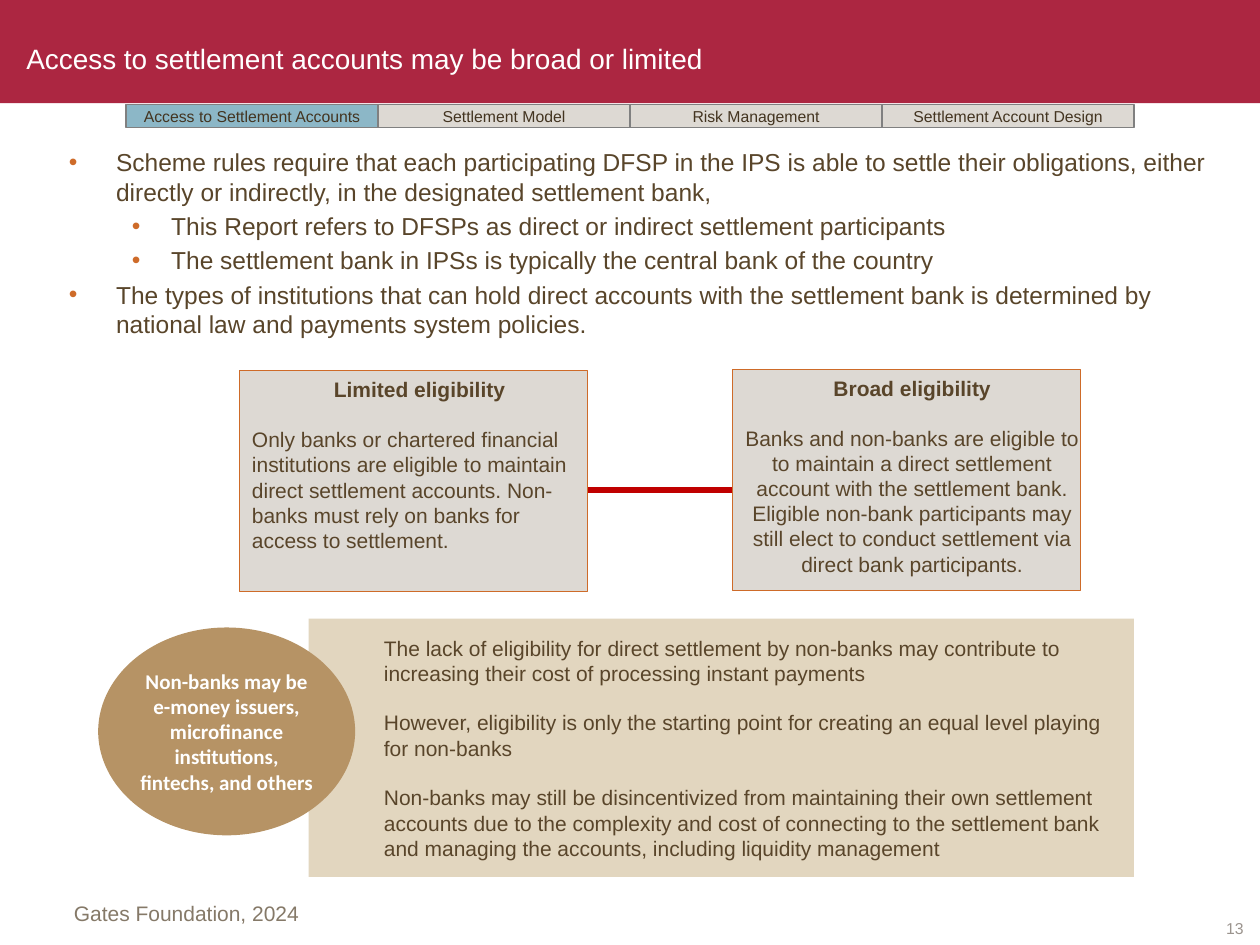
from lxml.etree import SubElement
from pptx import Presentation
from pptx.dml.color import RGBColor
from pptx.enum.shapes import MSO_CONNECTOR, MSO_SHAPE as Shape
from pptx.enum.text import MSO_ANCHOR as Anchor, MSO_AUTO_SIZE, PP_ALIGN as Align
from pptx.oxml import parse_xml
from pptx.oxml.ns import nsdecls, qn
from pptx.util import Cm, Pt

WHITE = RGBColor(0xFF, 0xFF, 0xFF)
CRIMSON = RGBColor(0xAC, 0x26, 0x41)
RED = RGBColor(0xC0, 0x00, 0x00)
ORANGE = RGBColor(0xCE, 0x6B, 0x29)
BROWN = RGBColor(0x59, 0x45, 0x2A)
DARK_BROWN = RGBColor(0x43, 0x34, 0x20)
TAUPE = RGBColor(0x85, 0x79, 0x68)
LIGHT_TAUPE = RGBColor(0x9B, 0x94, 0x8E)
STONE = RGBColor(0xDD, 0xD9, 0xD3)
SAND = RGBColor(0xE2, 0xD6, 0xBF)
TAN = RGBColor(0xB6, 0x93, 0x65)
BLUE = RGBColor(0x8C, 0xB7, 0xC7)
GREY = RGBColor(0x80, 0x80, 0x80)

BODY = [
    (0, "Scheme rules require that each participating DFSP in the IPS is able to settle "
        "their obligations, either directly or indirectly, in the designated settlement bank,"),
    (1, "This Report refers to DFSPs as direct or indirect settlement participants"),
    (1, "The settlement bank in IPSs is typically the central bank of the country"),
    (0, "The types of institutions that can hold direct accounts with the settlement bank "
        "is determined by national law and payments system policies."),
]
INDENTS = [(Cm(0.95), Cm(-0.95)), (Cm(2.06), Cm(-0.79))]
TABS = ["Access to Settlement Accounts", "Settlement Model", "Risk Management",
        "Settlement Account Design"]
LIMITED = ("Only banks or chartered financial institutions are eligible to maintain direct "
           "settlement accounts. Non-banks must rely on banks for access to settlement.")
BROAD = ("Banks and non-banks are eligible to to maintain a direct settlement account with "
         "the settlement bank. Eligible non-bank participants may still elect to conduct "
         "settlement via direct bank participants.")
REMARKS = [
    "The lack of eligibility for direct settlement by non-banks may contribute to "
    "increasing their cost of processing instant payments",
    "However, eligibility is only the starting point for creating an equal level playing "
    "for non-banks",
    "Non-banks may still be disincentivized from maintaining their own settlement accounts "
    "due to the complexity and cost of connecting to the settlement bank and managing the "
    "accounts, including liquidity management",
]


def set_all(target, values):
    for name, value in values.items():
        setattr(target, name, value)


def set_frame(tf, anchor=Anchor.TOP, insets=(0.25, 0.13, 0.25, 0.13)):
    left, top, right, bottom = map(Cm, insets)
    set_all(tf, dict(word_wrap=True, auto_size=MSO_AUTO_SIZE.NONE, vertical_anchor=anchor,
                     margin_left=left, margin_top=top, margin_right=right,
                     margin_bottom=bottom))


def add_text(tf, text, size, color, align=Align.LEFT, gap=0, bold=False, font="Arial"):
    """Write the next paragraph, using the empty first one if it is free."""
    p = tf.paragraphs[0]
    first = not p.runs
    if not first:
        p = tf.add_paragraph()
    set_all(p, dict(alignment=align, space_before=Pt(0 if first else gap)))
    r = p.add_run()
    r.text = text
    set_all(r.font, dict(name=font, size=Pt(size), bold=bold))
    r.font.color.rgb = color
    return p


def add_bullet(p, level):
    p.level = level
    margin, indent = INDENTS[level]
    pPr = p._p.get_or_add_pPr()
    pPr.set("marL", str(margin))
    pPr.set("indent", str(indent))
    pPr.append(parse_xml(f'<a:buClr {nsdecls("a")}><a:srgbClr val="{ORANGE}"/></a:buClr>'))
    SubElement(pPr, qn("a:buChar")).set("char", "•")


def add_block(shapes, kind, box, fill, line=None, width=0):
    sp = shapes.add_shape(kind, *map(Cm, box))
    sp.shadow.inherit = False
    sp.fill.solid()
    sp.fill.fore_color.rgb = fill
    if line is None:
        sp.line.fill.background()
    else:
        sp.line.color.rgb = line
        sp.line.width = Pt(width)
    return sp


def add_label(s, box, text, size, color, align=Align.LEFT, **frame):
    tf = s.shapes.add_textbox(*map(Cm, box)).text_frame
    set_frame(tf, **frame)
    add_text(tf, text, size, color, align)


def place(sp, box):
    set_all(sp, dict(zip(("left", "top", "width", "height"), map(Cm, box))))


def add_eligibility(s, box, heading, text, align):
    sp = add_block(s.shapes, Shape.RECTANGLE, box, STONE, ORANGE, 0.25)
    set_frame(sp.text_frame, insets=(0.25, 0.13, 0, 0.13))
    add_text(sp.text_frame, heading, 12, BROWN, Align.CENTER, bold=True)
    add_text(sp.text_frame, text, 12, BROWN, align, gap=14)


def add_tabs(s):
    group = s.shapes.add_group_shape()
    width = 5.08
    for i, name in enumerate(TABS):
        sp = add_block(group.shapes, Shape.RECTANGLE, (2.54 + i * width, 2.11, width, 0.46),
                       STONE if i else BLUE, GREY, 1)
        set_frame(sp.text_frame, Anchor.MIDDLE, (0, 0.13, 0, 0.13))
        add_text(sp.text_frame, name, 9, DARK_BROWN, Align.CENTER)


def add_link(s, x1, x2, y):
    line = s.shapes.add_connector(MSO_CONNECTOR.STRAIGHT, Cm(x1), Cm(y), Cm(x2), Cm(y))
    line.line.color.rgb = RED
    line.line.width = Pt(3)
    SubElement(line._element.spPr, qn("a:effectLst"))


def main():
    prs = Presentation()
    prs.slide_width, prs.slide_height = Cm(25.4), Cm(19.05)
    s = prs.slides.add_slide(prs.slide_layouts[1])
    title, body = s.shapes.title, s.placeholders[1]

    # Banner behind the title
    banner = add_block(s.shapes, Shape.RECTANGLE, (0, 0, 25.4, 2.08), CRIMSON)
    title._element.addprevious(banner._element)
    place(title, (0.28, 0.71, 18.26, 0.91))
    set_frame(title.text_frame)
    add_text(title.text_frame, "Access to settlement accounts may be broad or limited",
             16, WHITE)
    add_tabs(s)

    # Bullet list
    place(body, (1.14, 2.84, 23.75, 3.53))
    set_frame(body.text_frame)
    for level, text in BODY:
        add_bullet(add_text(body.text_frame, text, 14, BROWN, gap=2.8), level)

    # Limited and broad eligibility, linked from behind
    add_link(s, 6.02, 18.54, 9.88)
    add_eligibility(s, (4.83, 7.47, 7.01, 4.45), "Limited eligibility", LIMITED, Align.LEFT)
    add_eligibility(s, (14.76, 7.44, 7.01, 4.47), "Broad eligibility", BROAD, Align.CENTER)

    # Remarks panel with its ellipse
    panel = add_block(s.shapes, Shape.RECTANGLE, (6.22, 12.47, 16.64, 5.21), SAND)
    set_frame(panel.text_frame, Anchor.MIDDLE, (1.52, 0.13, 0.25, 0.13))
    for text in REMARKS:
        add_text(panel.text_frame, text, 12, BROWN, gap=14)
    ellipse = add_block(s.shapes, Shape.OVAL, (1.98, 12.65, 5.18, 4.19), TAN)
    set_frame(ellipse.text_frame, Anchor.MIDDLE, (0, 0.1, 0, 0.1))
    add_text(ellipse.text_frame, "Non-banks may be e-money issuers, microfinance "
             "institutions, fintechs, and others", 12, WHITE, Align.CENTER,
             bold=True, font="Calibri")

    # Source and page number
    add_label(s, (1.24, 18.03, 8.59, 1.02), "Gates Foundation, 2024", 12, TAUPE)
    add_label(s, (23.9, 18.03, 1.5, 1.02), "13", 9, LIGHT_TAUPE, Align.RIGHT,
              anchor=Anchor.BOTTOM, insets=(0.33, 0.15, 0.33, 0.15))

    prs.save("out.pptx")


if __name__ == "__main__":
    main()
